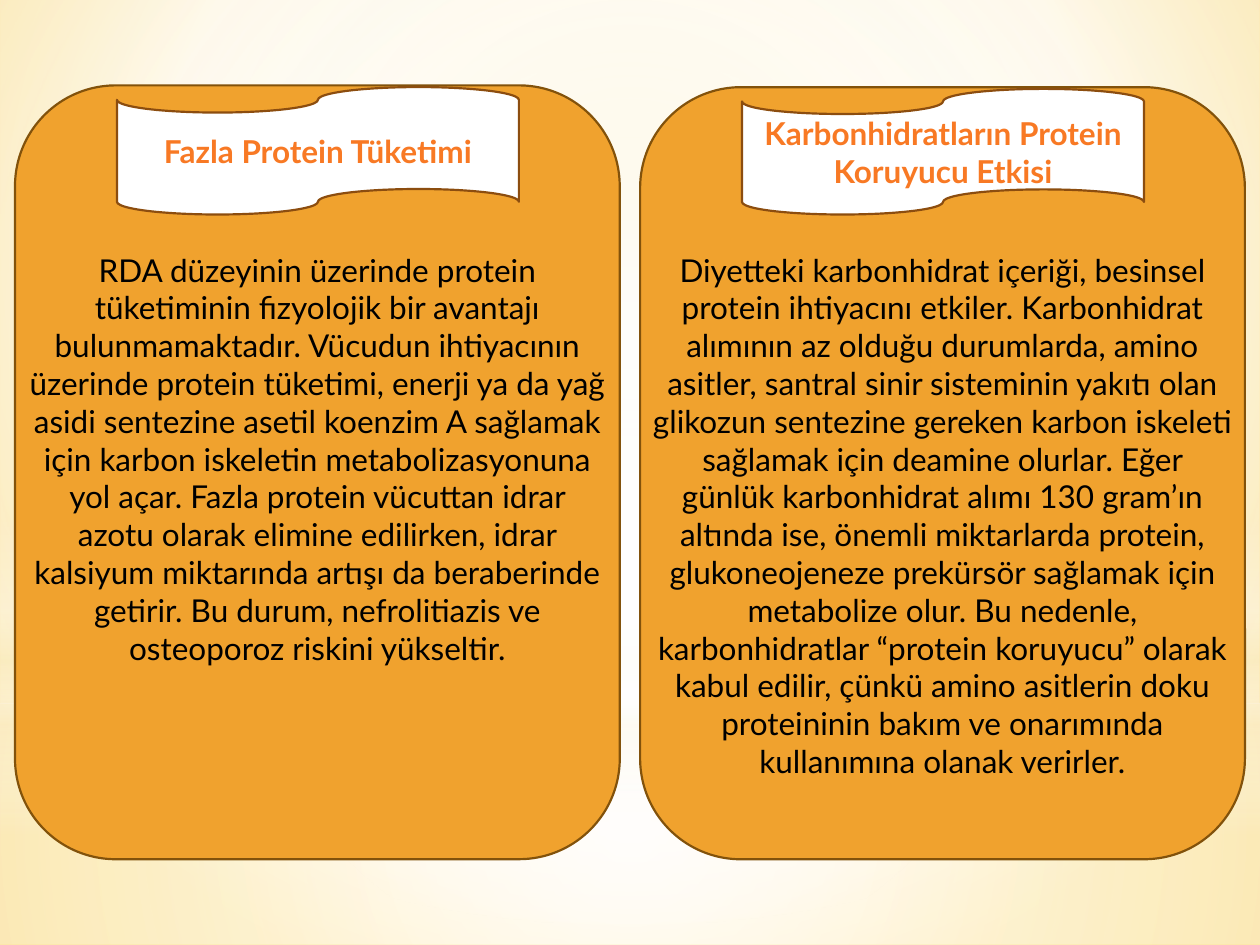
from lxml.etree import SubElement
from pptx import Presentation
from pptx.dml.color import RGBColor
from pptx.enum.shapes import MSO_SHAPE
from pptx.enum.text import MSO_ANCHOR, MSO_AUTO_SIZE, PP_ALIGN
from pptx.oxml.ns import qn
from pptx.util import Pt

THEME = {
    "font": "Lato", "size": 18, "text": "000000", "title": "F87924",
    "card": "F0A22E", "edge": "82520B", "tape": "FFFFFF", "rim": "8C4D0F",
    "white": "FFFFFF", "cream": "FBEEC9", "glow": "FEEAB3", "gold": "FFD96C",
}


def shade(fill, root, stops, focus=None):
    fill.gradient()
    grad = root.find(".//" + qn("a:gradFill"))
    for child in list(grad):
        grad.remove(child)
    chain = SubElement(grad, qn("a:gsLst"))
    for pos, name, alpha in stops:
        stop = SubElement(chain, qn("a:gs"), pos=str(pos * 1000))
        color = SubElement(stop, qn("a:srgbClr"), val=THEME[name])
        if alpha < 100:
            SubElement(color, qn("a:alpha"), val=str(alpha * 1000))
    if focus:
        way = SubElement(grad, qn("a:path"), path="circle")
        sides = {side: str(part * 1000) for side, part in zip("ltrb", focus)}
        SubElement(way, qn("a:fillToRect"), sides)
    else:
        SubElement(grad, qn("a:lin"), ang="5400000", scaled="0")


def write(shape, text, color="text", bold=False, anchor=MSO_ANCHOR.TOP, grow=False):
    frame = shape.text_frame
    frame.word_wrap = True
    frame.vertical_anchor = anchor
    if grow:
        frame.auto_size = MSO_AUTO_SIZE.SHAPE_TO_FIT_TEXT
    para = frame.paragraphs[0]
    para.alignment = PP_ALIGN.CENTER
    run = para.add_run()
    run.text = text
    run.font.name = THEME["font"]
    run.font.size = Pt(THEME["size"])
    run.font.bold = bold
    run.font.color.rgb = RGBColor.from_string(THEME[color])


deck = Presentation()
deck.slide_width, deck.slide_height = Pt(720), Pt(540)
slide = deck.slides.add_slide(deck.slide_layouts[6])
shapes = slide.shapes

shade(slide.background.fill, slide.element,
      [(0, "glow", 100), (60, "white", 100), (100, "gold", 100)], (20, 10, 20, 60))

mid = (50, 50, 50, 50)
layers = [
    (MSO_SHAPE.RECTANGLE, 401.8, 138.2, mid,
     [(0, "white", 91), (37, "white", 76), (100, "cream", 79)]),
    (MSO_SHAPE.RECTANGLE, 0, 401.8, mid,
     [(0, "white", 89), (48, "white", 62), (100, "cream", 79)]),
    (MSO_SHAPE.RECTANGLE, 296.6, 180, None,
     [(0, "white", 0), (29, "white", 30), (45, "cream", 40),
      (55, "white", 26), (65, "cream", 60), (100, "white", 0)]),
    (MSO_SHAPE.OVAL, 126, 401.8, mid, [(0, "white", 100), (56, "white", 0)]),
]
for kind, top, height, focus, stops in layers:
    layer = shapes.add_shape(kind, 0, Pt(top), Pt(720), Pt(height))
    layer.shadow.inherit = False
    layer.line.fill.background()
    shade(layer.fill, layer.element, stops, focus)

columns = [
    (8.6, 48.8, 290.9, "Fazla Protein Tüketimi",
     "RDA düzeyinin üzerinde protein tüketiminin fizyolojik bir avantajı "
     "bulunmamaktadır. Vücudun ihtiyacının üzerinde protein tüketimi, enerji ya da "
     "yağ asidi sentezine asetil koenzim A sağlamak için karbon iskeletin "
     "metabolizasyonuna yol açar. Fazla protein vücuttan idrar azotu olarak elimine "
     "edilirken, idrar kalsiyum miktarında artışı da beraberinde getirir. Bu durum, "
     "nefrolitiazis ve osteoporoz riskini yükseltir."),
    (365.8, 49.8, 334.1, "Karbonhidratların Protein Koruyucu Etkisi",
     "Diyetteki karbonhidrat içeriği, besinsel protein ihtiyacını etkiler. "
     "Karbonhidrat alımının az olduğu durumlarda, amino asitler, santral sinir "
     "sisteminin yakıtı olan glikozun sentezine gereken karbon iskeleti sağlamak için "
     "deamine olurlar. Eğer günlük karbonhidrat alımı 130 gram’ın altında ise, önemli "
     "miktarlarda protein, glukoneojeneze prekürsör sağlamak için metabolize olur. Bu "
     "nedenle, karbonhidratlar “protein koruyucu” olarak kabul edilir, çünkü amino "
     "asitlerin doku proteininin bakım ve onarımında kullanımına olanak verirler."),
]
wide = 345.6
for left, top, tall, title, body in columns:
    card = shapes.add_shape(MSO_SHAPE.ROUNDED_RECTANGLE,
                            Pt(left), Pt(top), Pt(wide), Pt(491 - top))
    tape = shapes.add_shape(MSO_SHAPE.FLOWCHART_PUNCHED_TAPE,
                            Pt(left + 58.2), Pt(top + 1), Pt(229.7), Pt(121.6 - top))
    for shape, fill, line in (card, "card", "edge"), (tape, "tape", "rim"):
        shape.shadow.inherit = False
        shape.fill.solid()
        shape.fill.fore_color.rgb = RGBColor.from_string(THEME[fill])
        shape.line.color.rgb = RGBColor.from_string(THEME[line])
        shape.line.width = Pt(1.25)
    write(tape, title, color="title", bold=True, anchor=MSO_ANCHOR.MIDDLE)
    box = shapes.add_textbox(Pt(left), Pt(139.7), Pt(wide), Pt(tall))
    write(box, body, grow=True)

deck.save("out.pptx")
